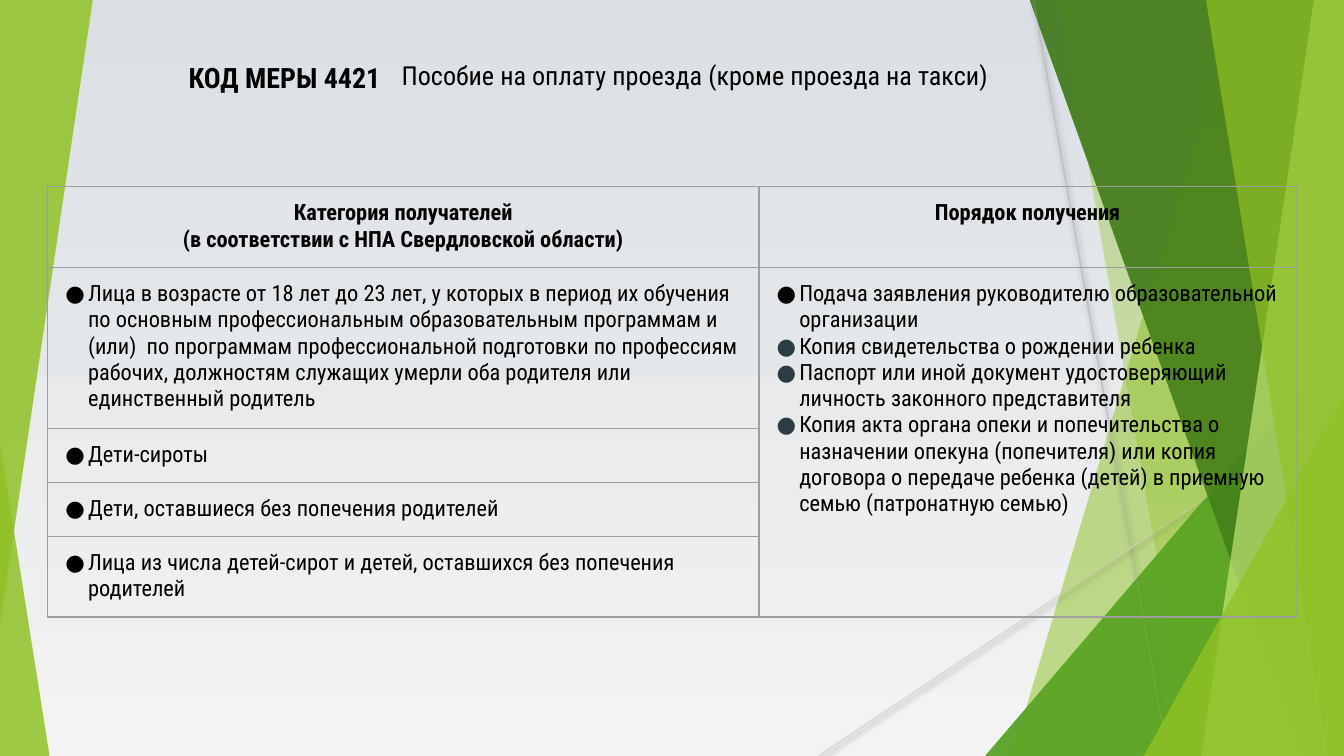
from lxml.etree import SubElement
from pptx import Presentation
from pptx.dml.color import RGBColor
from pptx.enum.shapes import MSO_CONNECTOR as Connector, MSO_SHAPE as Shape
from pptx.enum.text import MSO_ANCHOR as Anchor, PP_ALIGN as Align
from pptx.oxml.ns import qn
from pptx.util import Pt

WIDTH, HEIGHT = 720, 405
FONT = "Roboto Condensed"
BLACK, SLATE = "000000", "2C3C43"
RIGHT_PANELS = [
    ("band", (663, 542), "90C226", 30),
    ("band", (567.5, 638.5), "90C226", 20),
    ("triangle", (527.8, 180, 192.2, 225), "54A021", 72),
    ("band", (551.5, 697), "3F7819", 70),
    ("band", (704, 643.5), "C0E474", 70),
    ("band", (646, 711.5), "90C226", 65),
    ("triangle", (612.7, 212, 107.3, 193), "90C226", 80),
]
HEADERS = [
    ["Категория получателей", "(в соответствии с НПА Свердловской области)"],
    ["Порядок получения"],
]
RECIPIENTS = [
    "Лица в возрасте от 18 лет до 23 лет, у которых в период их обучения по основным "
    "профессиональным образовательным программам и (или)  по программам профессиональной "
    "подготовки по профессиям  рабочих, должностям служащих умерли оба родителя или "
    "единственный родитель",
    "Дети-сироты",
    "Дети, оставшиеся без попечения родителей",
    "Лица из числа детей-сирот и детей, оставшихся без попечения родителей",
]
STEPS = [
    "Подача заявления руководителю образовательной организации",
    "Копия свидетельства о рождении ребенка",
    "Паспорт или иной документ удостоверяющий личность законного представителя",
    "Копия акта органа опеки и попечительства о назначении опекуна (попечителя) или копия "
    "договора о передаче ребенка (детей) в приемную семью (патронатную семью)",
]


def color(value):
    """Turn a hex string into a colour."""
    return RGBColor.from_string(value)


def assign(target, values):
    """Set attributes of an object from a dict."""
    for name, value in values.items():
        setattr(target, name, value)


def child(parent, tag, **attributes):
    """Append a drawing element with the given attributes."""
    return SubElement(parent, qn(tag), {key: str(value) for key, value in attributes.items()})


def paint(shape, fill, opacity):
    """Give a shape a translucent fill, no line and no shadow."""
    shape.shadow.inherit = False
    shape.line.fill.background()
    shape.fill.solid()
    shape.fill.fore_color.rgb = color(fill)
    tint = shape.fill._xPr.find(".//" + qn("a:srgbClr"))
    child(tint, "a:alpha", val=opacity * 1000)


def add_band(slide, lefts, fill, opacity):
    """Draw a full-height panel with a slanted left edge."""
    top_left, bottom_left = lefts
    outline = slide.shapes.build_freeform(Pt(top_left), Pt(-0.6))
    corners = [(WIDTH, -0.6), (WIDTH, HEIGHT), (bottom_left, HEIGHT)]
    outline.add_line_segments([(Pt(x), Pt(y)) for x, y in corners])
    paint(outline.convert_to_shape(), fill, opacity)


def add_triangle(slide, frame, fill, opacity, apex=1, rotation=0):
    """Draw a triangle with its apex at a share of the width."""
    shape = slide.shapes.add_shape(Shape.ISOSCELES_TRIANGLE, *map(Pt, frame))
    shape.adjustments[0] = apex
    shape.rotation = rotation
    paint(shape, fill, opacity)


def add_right_panels(slide):
    """Draw one layer of the overlapping panels on the right."""
    for kind, geometry, fill, opacity in RIGHT_PANELS:
        draw = add_band if kind == "band" else add_triangle
        draw(slide, geometry, fill, opacity)


def add_ray(slide, ends, stroke):
    """Draw a thin line with a soft shadow."""
    ray = slide.shapes.add_connector(Connector.STRAIGHT, *map(Pt, ends))
    ray.line.color.rgb = color(stroke)
    ray.line.width = Pt(0.75)
    effects = child(ray._element.spPr, "a:effectLst")
    shadow = child(effects, "a:outerShdw", blurRad=Pt(3.1), dist=Pt(1.6),
                   dir=90 * 60000, rotWithShape=0)
    child(child(shadow, "a:srgbClr", val=BLACK), "a:alpha", val=38000)


def write(frame, texts, size, bold=False, **layout):
    """Fill a text frame with one paragraph per text."""
    frame.word_wrap = True
    for index, text in enumerate(texts):
        para = frame.paragraphs[0] if index == 0 else frame.add_paragraph()
        assign(para, layout)
        span = para.add_run()
        span.text = text
        assign(span.font, {"name": FONT, "size": Pt(size), "bold": bold})
        span.font.color.rgb = color(BLACK)


def add_text(slide, frame, text, size, insets, **formats):
    """Add a vertically centred text box."""
    box = slide.shapes.add_textbox(*map(Pt, frame)).text_frame
    across, down = map(Pt, insets)
    assign(box, {"vertical_anchor": Anchor.MIDDLE, "margin_left": across,
                 "margin_right": across, "margin_top": down, "margin_bottom": down})
    write(box, [text], size, **formats)


def add_bullets(frame, bullet_colors):
    """Give each paragraph a hanging round bullet."""
    for para, bullet_color in zip(frame.paragraphs, bullet_colors):
        properties = para._p.get_or_add_pPr()
        properties.set("marL", str(Pt(14.4)))
        properties.set("indent", str(Pt(-12.2)))
        child(child(properties, "a:buClr"), "a:srgbClr", val=bullet_color)
        child(properties, "a:buFont", typeface=FONT)
        child(properties, "a:buChar", char="●")


def style_cell(cell):
    """Give a cell grey borders, even margins and no fill."""
    sides = ("left", "right", "top", "bottom")
    assign(cell, {f"margin_{side}": Pt(7.2) for side in sides})
    properties = cell._tc.get_or_add_tcPr()
    for side in sides:
        border = child(properties, f"a:ln{side[0].upper()}", w=Pt(0.75))
        child(child(border, "a:solidFill"), "a:srgbClr", val="9E9E9E")
    cell.fill.background()


def add_measure_table(slide):
    """Add the table of recipients and steps."""
    heights = [42.4, 84.6, 28.4, 28.4, 42.4]
    frame = map(Pt, (25.6, 100, 669, sum(heights)))
    table = slide.shapes.add_table(len(heights), 2, *frame).table
    assign(table, {"first_row": False, "horz_banding": False})
    for column, width in zip(table.columns, (381, 288)):
        column.width = Pt(width)
    for row, height in zip(table.rows, heights):
        row.height = Pt(height)
    for cell in table.iter_cells():
        style_cell(cell)
    table.cell(1, 1).merge(table.cell(4, 1))
    for column, texts in enumerate(HEADERS):
        write(table.cell(0, column).text_frame, texts, 12, bold=True, alignment=Align.CENTER)
    for row, text in enumerate(RECIPIENTS, start=1):
        recipient = table.cell(row, 0).text_frame
        write(recipient, [text], 12)
        add_bullets(recipient, [BLACK])
    steps = table.cell(1, 1).text_frame
    write(steps, STEPS, 12)
    add_bullets(steps, [BLACK] + [SLATE] * 3)


def set_background(slide):
    """Fill the slide with a vertical grey gradient."""
    fill = slide.background.fill
    fill.gradient()
    fill.gradient_angle = 270
    for stop, position, shade in zip(fill.gradient_stops, (0, 1), ("DADFE4", "F3F3F3")):
        assign(stop, {"position": position})
        stop.color.rgb = color(shade)


def main():
    """Build the slide and save it."""
    deck = Presentation()
    assign(deck, {"slide_width": Pt(WIDTH), "slide_height": Pt(HEIGHT)})
    page = deck.slides.add_slide(deck.slide_layouts[6])
    set_background(page)
    add_right_panels(page)
    add_triangle(page, (0, 237, 26.6, 168), "90C226", 85, apex=0)
    add_ray(page, (553.7, 0, 625.7, HEIGHT), "BFBFBF")
    add_ray(page, (WIDTH, 217.4, 438.5, HEIGHT), "D9D9D9")
    add_right_panels(page)
    add_triangle(page, (0, 0, 49.7, 334.8), "90C226", 85, rotation=180)
    add_text(page, (210.2, 13.7, 453.6, 55.4), "Пособие на оплату проезда (кроме проезда на такси)",
             14, (5, 2.9), line_spacing=0.9)
    add_text(page, (59, 13.7, 152, 55.4), "КОД МЕРЫ 4421", 15, (7.2, 7.2),
             bold=True, alignment=Align.RIGHT)
    add_measure_table(page)
    deck.save("out.pptx")


if __name__ == "__main__":
    main()
